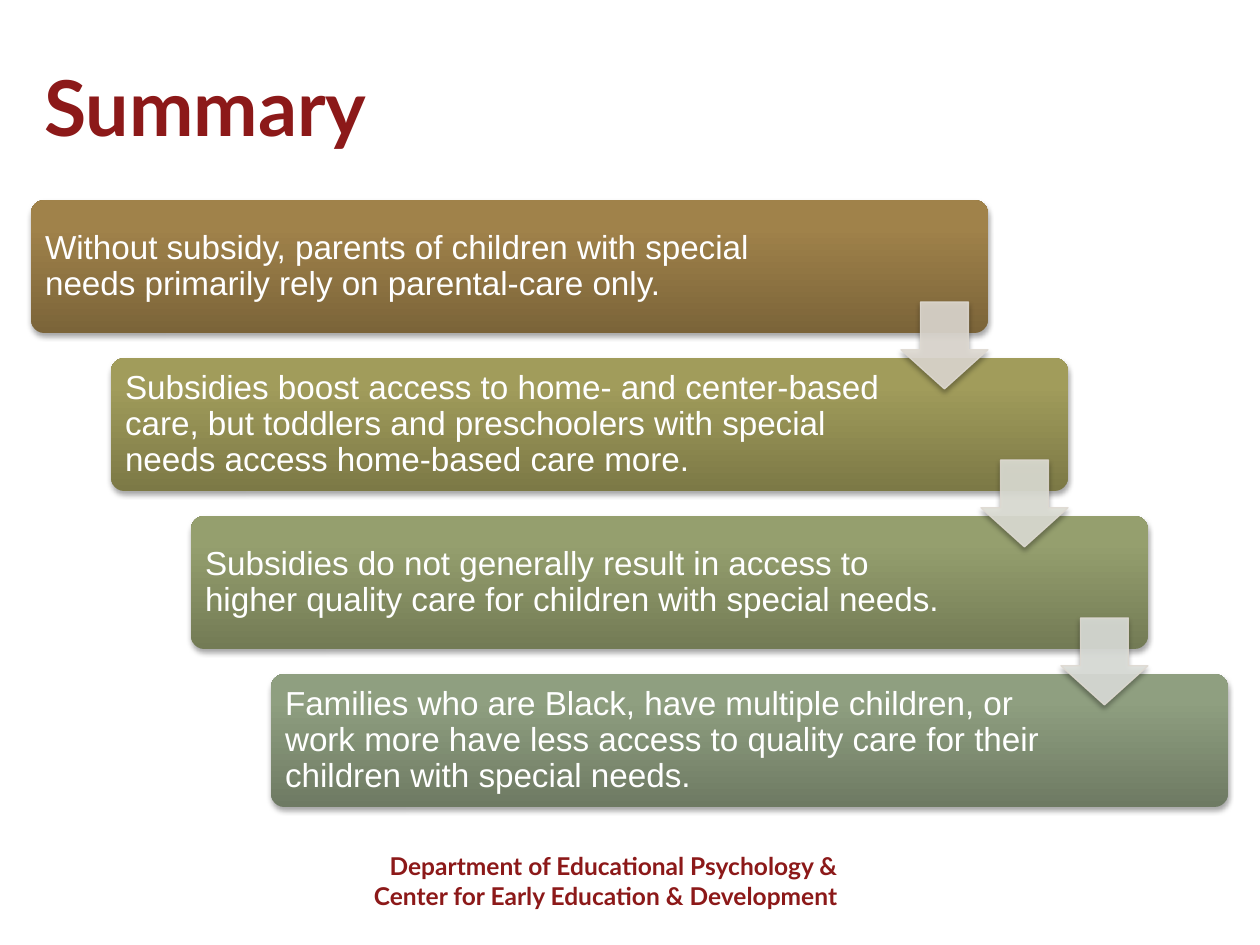
from lxml import etree
from pptx import Presentation
from pptx import util as u
from pptx.dml.color import RGBColor
from pptx.enum import shapes, text
from pptx.oxml import parse_xml
from pptx.oxml.ns import nsdecls, qn

PX = 914400 / 126
MAROON = RGBColor(0x8C, 0x19, 0x19)
WHITE = RGBColor(0xFF, 0xFF, 0xFF)
ARROW_LINE = RGBColor(0xDE, 0xD9, 0xD1)
BAR_LEFT, BAR_TOP, BAR_WIDTH, BAR_HEIGHT = 31, 200, 957, 133
STEP_X, STEP_Y = 80, 158
ARROW_SIZE = 87

STEPS = [
    ("Without subsidy, parents of children with special needs primarily rely on parental-care only.",
     801,
     (RGBColor(0x7B, 0x64, 0x39), RGBColor(0xA0, 0x82, 0x4A), RGBColor(0xA2, 0x83, 0x49))),
    ("Subsidies boost access to home- and center-based care, but toddlers and preschoolers "
     "with special needs access home-based care more.",
     783,
     (RGBColor(0x7C, 0x79, 0x46), RGBColor(0xA1, 0x9C, 0x5B), RGBColor(0xA3, 0x9E, 0x5A))),
    ("Subsidies do not generally result in access to higher quality care for children with special needs.",
     783,
     (RGBColor(0x73, 0x7B, 0x55), RGBColor(0x95, 0x9F, 0x6E), RGBColor(0x96, 0xA1, 0x6E))),
    ("Families who are Black, have multiple children, or work more have less access to quality "
     "care for their children with special needs.",
     783,
     (RGBColor(0x6E, 0x7A, 0x63), RGBColor(0x8F, 0x9F, 0x80), RGBColor(0x90, 0xA0, 0x80))),
]
ARROW_FILLS = [
    RGBColor(0xDE, 0xD9, 0xD1),
    RGBColor(0xDE, 0xDF, 0xD6),
    RGBColor(0xDC, 0xDF, 0xDA),
]


def px(*lengths):
    return [u.Emu(round(length * PX)) for length in lengths]


def add_shadow(shape):
    shape.shadow.inherit = False
    effects = shape._element.spPr.find(qn("a:effectLst"))
    effects.append(parse_xml(
        f'<a:outerShdw {nsdecls("a")} blurRad="39370" dist="22860" dir="5400000" rotWithShape="0">'
        '<a:srgbClr val="000000"><a:alpha val="35000"/></a:srgbClr></a:outerShdw>'))


def set_gradient(shape, colors):
    stops = "".join(
        f'<a:gs pos="{position}"><a:srgbClr val="{color}"/></a:gs>'
        for position, color in zip((0, 80000, 100000), colors))
    shape._element.spPr.find(qn("a:prstGeom")).addnext(parse_xml(
        f'<a:gradFill {nsdecls("a")} rotWithShape="1"><a:gsLst>{stops}</a:gsLst>'
        '<a:lin ang="16200000" scaled="0"/></a:gradFill>'))


def add_text(slide, box, lines, font, size, color, bold=False, inset=None,
             align=text.PP_ALIGN.LEFT, anchor=text.MSO_ANCHOR.MIDDLE, spacing=None):
    frame = slide.shapes.add_textbox(*px(*box)).text_frame
    frame.word_wrap = True
    frame.vertical_anchor = anchor
    if inset is not None:
        frame.margin_left = frame.margin_right = u.Inches(inset)
        frame.margin_top = frame.margin_bottom = u.Inches(inset)
    frame.text = "\n".join(lines)
    for paragraph in frame.paragraphs:
        paragraph.alignment = align
        paragraph.line_spacing = spacing
        paragraph.font.name = font
        paragraph.font.size = u.Pt(size)
        paragraph.font.bold = bold
        paragraph.font.color.rgb = color


def add_bar(slide, left, top, colors):
    bar = slide.shapes.add_shape(
        shapes.MSO_SHAPE.ROUNDED_RECTANGLE, *px(left, top, BAR_WIDTH, BAR_HEIGHT))
    bar.adjustments[0] = 0.1
    set_gradient(bar, colors)
    bar.line.fill.background()
    add_shadow(bar)


def add_arrow(slide, left, top, color):
    arrow = slide.shapes.add_shape(
        shapes.MSO_SHAPE.DOWN_ARROW, *px(left, top, ARROW_SIZE, ARROW_SIZE))
    arrow.adjustments[0] = 0.55
    arrow.adjustments[1] = 0.45
    arrow.fill.solid()
    arrow.fill.fore_color.rgb = color
    arrow.line.color.rgb = ARROW_LINE
    arrow.line.width = u.Pt(0.75)
    for rgb in arrow._element.spPr.iter(qn("a:srgbClr")):
        etree.SubElement(rgb, qn("a:alpha")).set("val", "90000")
    add_shadow(arrow)


def main():
    presentation = Presentation()
    presentation.slide_width, presentation.slide_height = px(1260, 945)
    slide = presentation.slides.add_slide(presentation.slide_layouts[6])

    add_text(slide, (220, 845, 630, 72),
             ["Department of Educational Psychology &", "Center for Early Education & Development"],
             "Lato", 14, MAROON, bold=True,
             align=text.PP_ALIGN.RIGHT, anchor=text.MSO_ANCHOR.TOP)
    add_text(slide, (32, 53, 1197, 105), ["Summary"], "Lato", 44, MAROON, bold=True)

    for index, (statement, width, colors) in enumerate(STEPS):
        left, top = BAR_LEFT + index * STEP_X, BAR_TOP + index * STEP_Y
        add_bar(slide, left, top, colors)
        add_text(slide, (left + 4, top + 4, width, BAR_HEIGHT - 8), [statement],
                 "Arial", 19, WHITE, inset=0.08, spacing=0.9)

    for index, color in enumerate(ARROW_FILLS):
        add_arrow(slide, BAR_LEFT + BAR_WIDTH - ARROW_SIZE + index * STEP_X,
                  BAR_TOP + 102 + index * STEP_Y, color)

    presentation.save("out.pptx")


if __name__ == "__main__":
    main()
